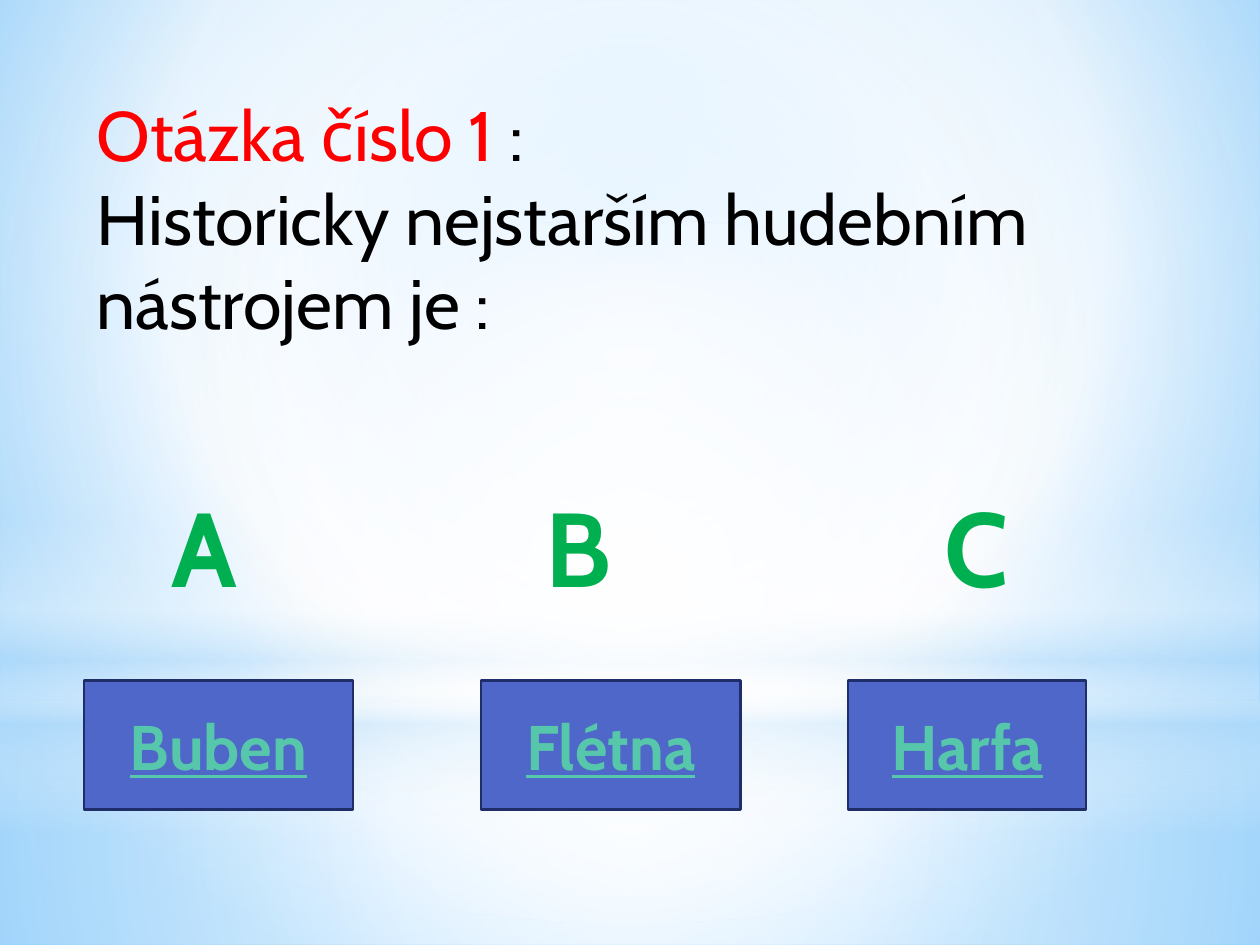
from lxml import etree
from pptx import Presentation
from pptx import util as u
from pptx.dml.color import RGBColor
from pptx.enum import shapes, text
from pptx.oxml.ns import qn

COLORS = {
    "question": "FF0000", "body": "000000", "letter": "00B050",
    "button": "4E67C8", "border": "1F2E69", "answer": "56C7AA",
    "white": "FFFFFF", "haze": "B4DCFA", "sky": "9ED5FF", "deep": "5BB9FF",
}
FONT = "Cabin"
W, H = 25.4, 19.05
HORIZON = 14.17
CENTRE = (50, 50, 50, 50)


def rgb(name):
    return RGBColor.from_string(COLORS[name])


def set_gradient(fill, owner, stops, focus=None):
    """Fill with (position, colour, opacity) stops, round a focus or downwards."""
    fill.gradient()
    grad = owner.find(".//" + qn("a:gradFill"))
    for child in list(grad):
        grad.remove(child)
    stop_list = etree.SubElement(grad, qn("a:gsLst"))
    for pos, color, opacity in stops:
        gs = etree.SubElement(stop_list, qn("a:gs"), pos=str(pos * 1000))
        clr = etree.SubElement(gs, qn("a:srgbClr"), val=COLORS[color])
        if opacity < 100:
            etree.SubElement(clr, qn("a:alpha"), val=str(opacity * 1000))
    if focus:
        circle = etree.SubElement(grad, qn("a:path"), path="circle")
        sides = {side: str(v * 1000) for side, v in zip("ltrb", focus)}
        etree.SubElement(circle, qn("a:fillToRect"), **sides)
    else:
        etree.SubElement(grad, qn("a:lin"), ang="5400000", scaled="0")


def add_shape(s, kind, box):
    sp = s.shapes.add_shape(kind, *map(u.Cm, box))
    sp.shadow.inherit = False
    return sp


def add_text_box(s, box):
    tf = s.shapes.add_textbox(*map(u.Cm, box)).text_frame
    tf.word_wrap = True
    return tf


def add_run(p, words, color, **formats):
    r = p.add_run()
    r.text = words
    r.font.color.rgb = rgb(color)
    for key, value in {"name": FONT, **formats}.items():
        setattr(r.font, key, value)


def draw_backdrop(s):
    set_gradient(s.background.fill, s._element,
                 [(0, "sky", 100), (60, "white", 100), (100, "deep", 100)],
                 (20, 10, 20, 60))
    rect, oval = shapes.MSO_SHAPE.RECTANGLE, shapes.MSO_SHAPE.OVAL
    layers = [
        (rect, (0, HORIZON, W, H - HORIZON), CENTRE,
         [(0, "white", 91), (37, "white", 76), (100, "haze", 79)]),
        (rect, (0, 0, W, HORIZON), CENTRE,
         [(0, "white", 89), (48, "white", 62), (100, "haze", 79)]),
        (rect, (0, 10.46, W, 6.35), None,
         [(0, "white", 0), (29, "white", 30), (45, "haze", 40),
          (55, "white", 26), (65, "haze", 60), (100, "white", 0)]),
        (oval, (0, 4.45, W, HORIZON), CENTRE,
         [(0, "white", 100), (56, "white", 0)]),
    ]
    for kind, box, focus, stops in layers:
        sp = add_shape(s, kind, box)
        sp.line.fill.background()
        set_gradient(sp.fill, sp._element, stops, focus)


def draw_question(s, box):
    p = add_text_box(s, box).paragraphs[0]
    size = u.Pt(40)
    add_run(p, "Otázka číslo 1 ", "question", size=size)
    add_run(p, ":", "body", size=size)
    p.add_line_break()
    add_run(p, "Historicky nejstarším hudebním nástrojem je :", "body", size=size)


def draw_option(s, box, letter, letter_dx, letter_w, answer):
    """Place a letter at the top of the box and its answer button at the bottom."""
    x, y, w, h = box
    p = add_text_box(s, (x + letter_dx, y, letter_w, 2.82)).paragraphs[0]
    add_run(p, letter, "letter", size=u.Pt(60), bold=True)

    button_h = 2.6
    sp = add_shape(s, shapes.MSO_SHAPE.RECTANGLE, (x, y + h - button_h, w, button_h))
    sp.fill.solid()
    sp.fill.fore_color.rgb = rgb("button")
    sp.line.color.rgb = rgb("border")
    sp.line.width = u.Pt(1.25)
    tf = sp.text_frame
    tf.vertical_anchor = text.MSO_ANCHOR.MIDDLE
    p = tf.paragraphs[0]
    p.alignment = text.PP_ALIGN.CENTER
    add_run(p, answer, "answer", size=u.Pt(36), bold=True, underline=True)


def main():
    prs = Presentation()
    prs.slide_width, prs.slide_height = u.Cm(W), u.Cm(H)
    s = prs.slides.add_slide(prs.slide_layouts[6])
    draw_backdrop(s)
    draw_question(s, (1.7, 1.73, 22.4, 5.38))
    options = [
        (1.7, 5.41, "A", 1.5, 2.9, "Buben"),
        (9.7, 5.23, "B", 1.04, 2.21, "Flétna"),
        (17.1, 4.8, "C", 1.7, 1.4, "Harfa"),
    ]
    for x, w, *content in options:
        draw_option(s, (x, 9.6, w, 6.72), *content)
    prs.save("out.pptx")


if __name__ == "__main__":
    main()
